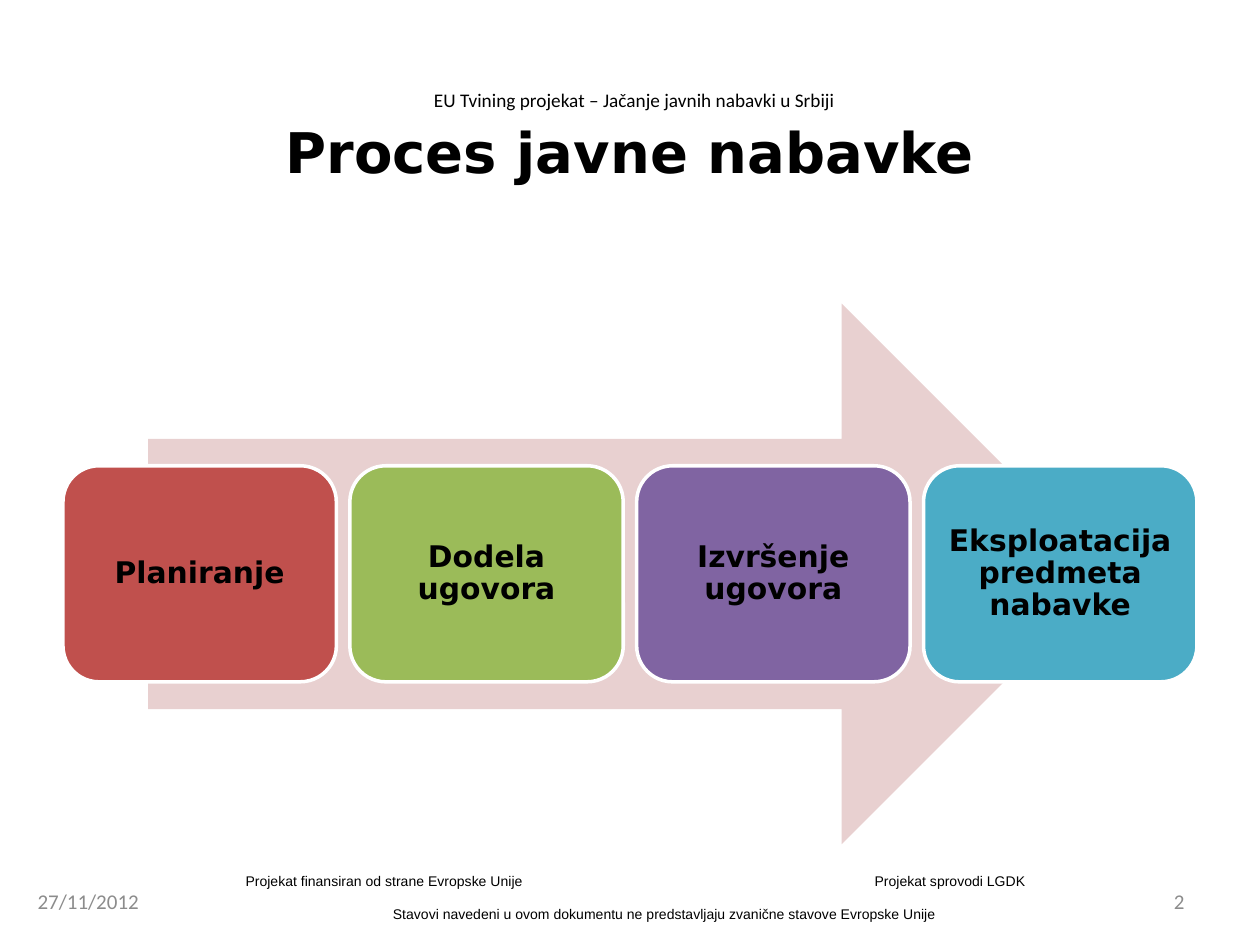
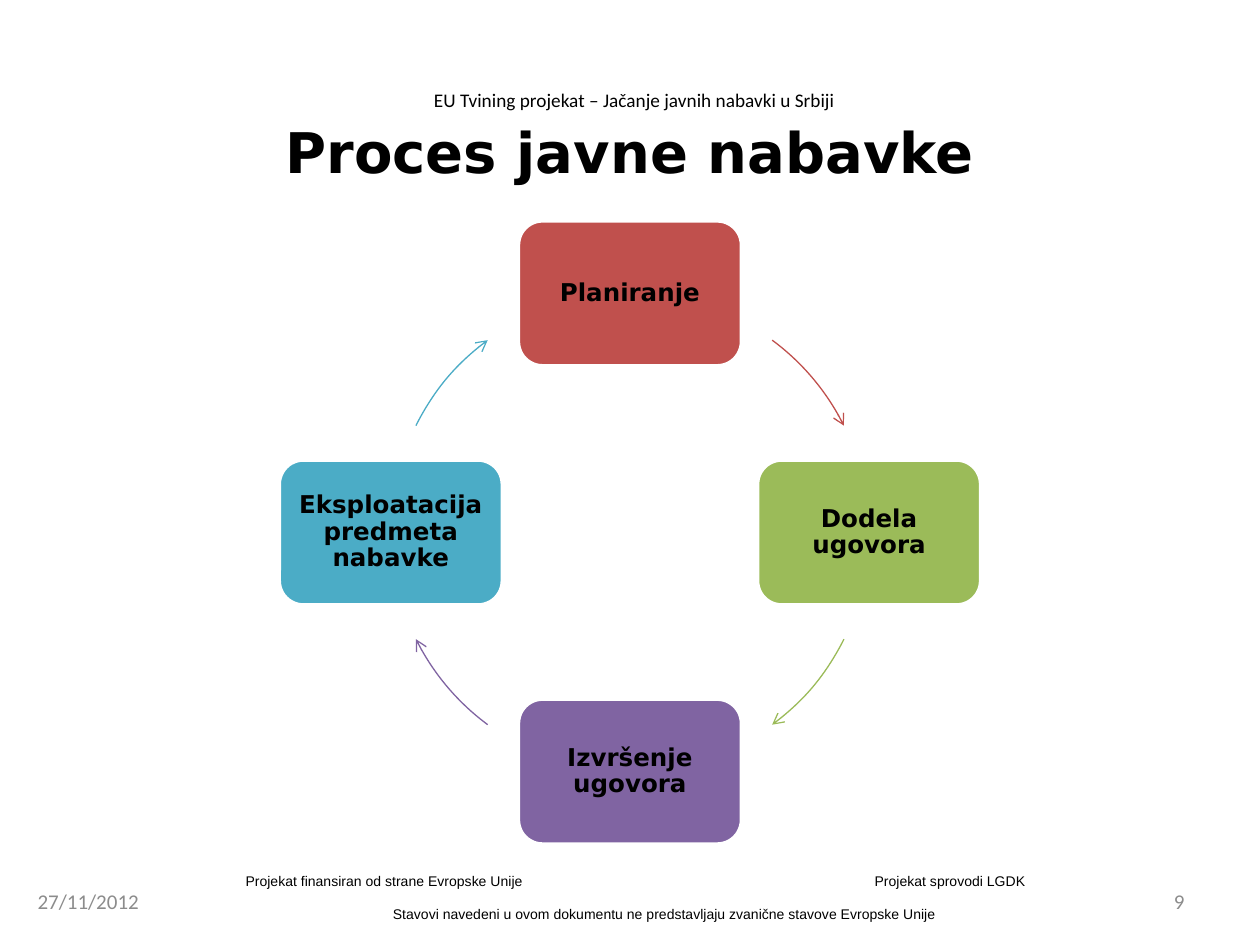
"""Build two slides on the public procurement process, as a line and as a cycle."""
from dataclasses import dataclass
from math import cos, radians, sin

from lxml import etree
from pptx import Presentation
from pptx import util as u
from pptx.dml.color import RGBColor
from pptx.enum import shapes, text
from pptx.oxml import ns

COLS, ROWS = 100, 75
STEPS = ["Planiranje", "Dodela ugovora", "Izvršenje ugovora",
         "Eksploatacija predmeta nabavke"]


@dataclass(frozen=True)
class Theme:
    """Colours, fonts and type sizes."""
    ink: str = "000000"
    pale: str = "E8D0D0"
    grey: str = "8C8C8C"
    white: str = "FFFFFF"
    hues: tuple = ("C0504D", "9BBB59", "8064A2", "4BACC6")
    bold: str = "DejaVu Sans"
    body: str = "Calibri"
    foot: str = "Arial"
    title: int = 32
    large: int = 17
    mid: int = 14
    date: int = 12
    head: int = 11
    small: int = 8


def write(frame, words, size, font, color, bold=False, align="CENTER",
          anchor="MIDDLE", inset=None, line=None, before=0, tab=None):
    """Fill a text frame, one paragraph for each line of words."""
    frame.word_wrap = True
    frame.vertical_anchor = text.MSO_ANCHOR[anchor]
    if inset is not None:
        frame.margin_left = frame.margin_right = u.Inches(inset)
        frame.margin_top = frame.margin_bottom = u.Inches(inset)
    for i, part in enumerate(words.split("\n")):
        para = frame.add_paragraph() if i else frame.paragraphs[0]
        if "\t" in part:
            stops = etree.SubElement(para._p.get_or_add_pPr(), ns.qn("a:tabLst"))
            etree.SubElement(stops, ns.qn("a:tab"), pos=str(tab), algn="l")
            para.alignment = text.PP_ALIGN.LEFT
        else:
            para.alignment = text.PP_ALIGN[align]
        if line:
            para.line_spacing = line
        if i:
            para.space_before = u.Pt(before)
        run = para.add_run()
        run.text = part
        run.font.name, run.font.size, run.font.bold = font, u.Pt(size), bold
        run.font.color.rgb = RGBColor.from_string(color)


class Deck:
    """Hold the style and the current slide."""

    def __init__(self, theme):
        """Start an empty deck."""
        self.theme = theme
        self.prs = Presentation()
        self.prs.slide_width, self.prs.slide_height = u.Inches(10), u.Inches(7.5)
        self.slide = None

    def x(self, col):
        """Turn columns into a length."""
        return round(self.prs.slide_width * col / COLS)

    def y(self, row):
        """Turn rows into a length."""
        return round(self.prs.slide_height * row / ROWS)

    def area(self, left, top, wide, high):
        """Turn a grid area into lengths."""
        return self.x(left), self.y(top), self.x(wide), self.y(high)

    def label(self, words, area, size, font, color=None, **form):
        """Add a text box."""
        box = self.slide.shapes.add_textbox(*self.area(*area))
        write(box.text_frame, words, size, font, color or self.theme.ink, **form)

    def shape(self, kind, area, fill, edge=None):
        """Add a filled preset shape."""
        item = self.slide.shapes.add_shape(
            shapes.MSO_SHAPE[kind], *self.area(*area))
        item.shadow.inherit = False
        item.fill.solid()
        item.fill.fore_color.rgb = RGBColor.from_string(fill)
        if edge:
            item.line.color.rgb = RGBColor.from_string(edge)
            item.line.width = u.Pt(2)
        else:
            item.line.fill.background()
        return item

    def step(self, k, area, size, inset):
        """Add the rounded box of step k."""
        t = self.theme
        box = self.shape("ROUNDED_RECTANGLE", area, t.hues[k], t.white)
        write(box.text_frame, STEPS[k], size, t.bold, t.ink, bold=True,
              inset=inset, line=0.9)

    def arc(self, mid, rad, start, sweep, color):
        """Add a curved arrow along a circle, framed by the whole circle."""
        near, far = [(self.x(mid[0] + d), self.y(mid[1] + d))
                     for d in (-rad, rad)]
        pen = self.slide.shapes.build_freeform(*near)
        pen.add_line_segments([far], close=False)
        curve = pen.convert_to_shape()
        curve.shadow.inherit = False
        curve.fill.background()
        curve.line.color.rgb = RGBColor.from_string(color)
        curve.line.width = u.Pt(0.75)
        props = curve.element.spPr
        etree.SubElement(props.find(ns.qn("a:ln")), ns.qn("a:tailEnd"),
                         type="arrow")
        track = props.find(".//" + ns.qn("a:path"))
        track.remove(track.find(ns.qn("a:lnTo")))
        size, turn = self.x(rad), radians(start)
        first = track.find(".//" + ns.qn("a:pt"))
        first.set("x", str(round(size * (1 + cos(turn)))))
        first.set("y", str(round(size * (1 + sin(turn)))))
        etree.SubElement(track, ns.qn("a:arcTo"), wR=str(size), hR=str(size),
                         stAng=str(round(start % 360 * 60000)),
                         swAng=str(round(sweep * 60000)))

    def page(self, number):
        """Start a slide with its title, header and footer."""
        t = self.theme
        self.slide = self.prs.slides.add_slide(self.prs.slide_layouts[6])
        self.label("EU Tvining projekat – Jačanje javnih nabavki u Srbiji",
                   (7.05, 6.5, 86.6, 2.8), t.head, t.body, anchor="TOP")
        self.label("Projekat finansiran od strane Evropske Unije\t"
                   "Projekat sprovodi LGDK\n"
                   "Stavovi navedeni u ovom dokumentu ne predstavljaju "
                   "zvanične stavove Evropske Unije",
                   (18.5, 68.75, 68.5, 5.1), t.small, t.foot, anchor="TOP",
                   before=9.5, tab=self.x(49.93))
        self.label("Proces javne nabavke", (5, 3, 90, 18), t.title, t.bold,
                   bold=True)
        self.label("27/11/2012", (2, 69.5, 26.4, 4), t.date, t.body, t.grey,
                   align="LEFT")
        self.label(str(number), (71.7, 69.5, 23.3, 4), t.date, t.body, t.grey,
                   align="RIGHT")


def line(deck):
    """Show the steps in a row on a broad arrow."""
    deck.page(2)
    deck.shape("RIGHT_ARROW", (11.75, 24.1, 76.5, 42.9), deck.theme.pale)
    wide, high, left, span = 21.7, 17.15, 5, 90
    pitch = (span - wide) / (len(STEPS) - 1)
    for k in range(len(STEPS)):
        deck.step(k, (left + k * pitch, 36.97, wide, high),
                  deck.theme.large, 0.07)


def cycle(deck):
    """Show the steps around a circle."""
    deck.page(9)
    mid, rad, wide, high = (50, 42.26), 18.98, 17.7, 11.5
    for k, hue in enumerate(deck.theme.hues):
        turn = 90 * k - 90
        left = mid[0] + rad * cos(radians(turn)) - wide / 2
        top = mid[1] + rad * sin(radians(turn)) - high / 2
        deck.step(k, (left, top, wide, high), deck.theme.mid, 0.06)
        gap = 26.5 if k % 2 else 36.5
        deck.arc(mid, rad, turn + gap, 27, hue)


def main():
    """Build and save the deck."""
    deck = Deck(Theme())
    line(deck)
    cycle(deck)
    deck.prs.save("out.pptx")


if __name__ == "__main__":
    main()
